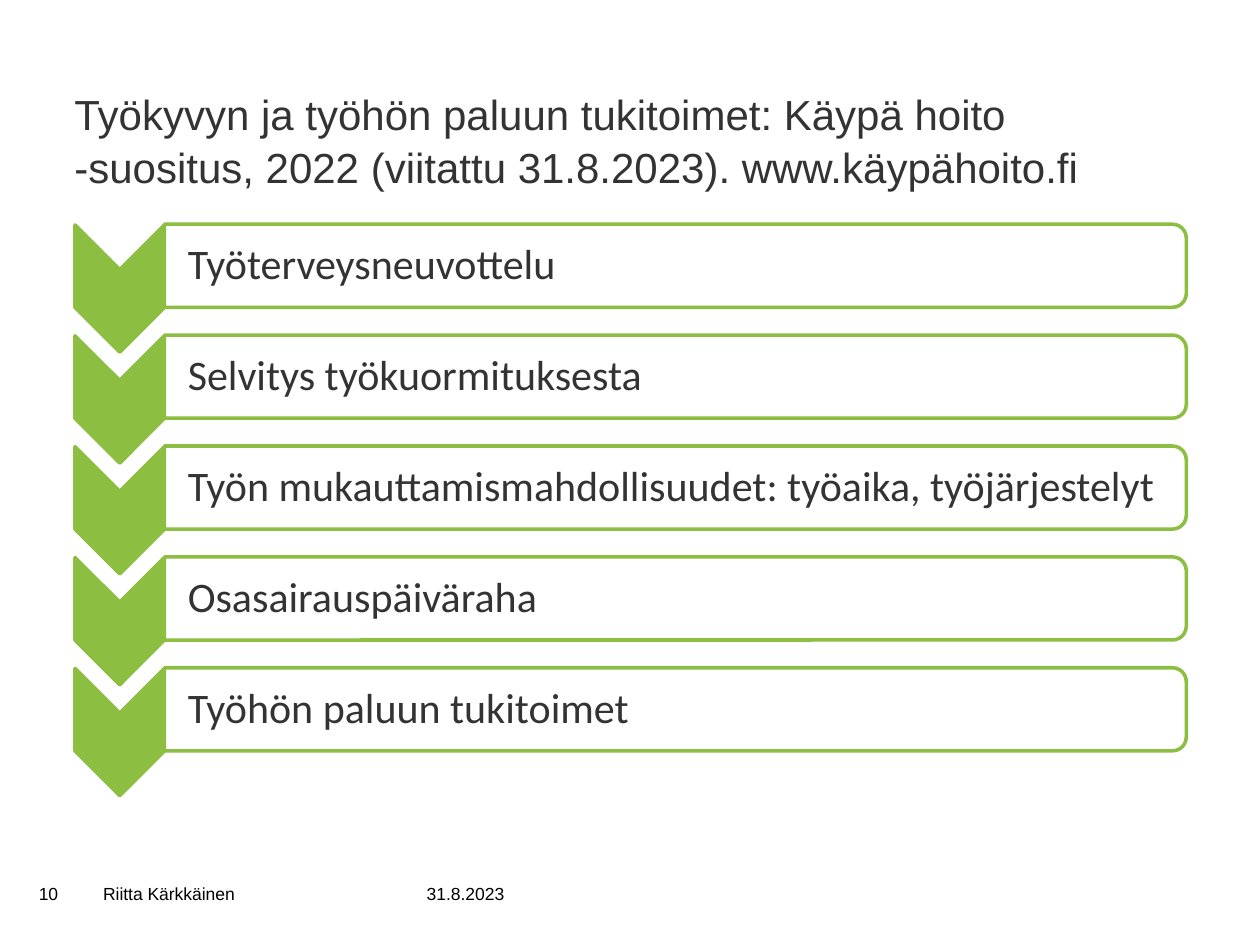
"""Build the slide on support measures for returning to work."""
from dataclasses import dataclass

from lxml import etree
from pptx import Presentation
from pptx.dml.color import RGBColor as Rgb
from pptx.enum.lang import MSO_LANGUAGE_ID as Lang
from pptx.enum.shapes import MSO_SHAPE as Kind
from pptx.enum.text import MSO_ANCHOR as Anchor, MSO_AUTO_SIZE as Fit, PP_ALIGN as Align
from pptx.oxml.ns import qn
from pptx.util import Inches, Pt


@dataclass(frozen=True)
class Theme:
    green: Rgb = Rgb(0x8C, 0xBE, 0x41)
    white: Rgb = Rgb(0xFF, 0xFF, 0xFF)
    dark: Rgb = Rgb(0x33, 0x33, 0x33)
    black: Rgb = Rgb(0, 0, 0)
    head: str = "Arial"
    body: str = "Calibri"
    large: int = 24
    small: int = 10


theme = Theme()


def write(box, text, font, size, color, pads, anchor=Anchor.MIDDLE, align=Align.LEFT):
    frame = box.text_frame
    frame.word_wrap, frame.auto_size = True, Fit.NONE
    frame.vertical_anchor = anchor
    (frame.margin_left, frame.margin_top,
     frame.margin_right, frame.margin_bottom) = [Inches(p) for p in pads]
    para = frame.paragraphs[0]
    para.alignment = align
    run = para.add_run()
    run.text = text
    run.font.name, run.font.size = font, Pt(size)
    run.font.color.rgb = color
    run.font.language_id = Lang.FINNISH
    return para


def turned(kind, mid_x, mid_y, wide, high, fill):
    shape = slide.shapes.add_shape(kind, Inches(mid_x - wide / 2), Inches(mid_y - high / 2),
                                   Inches(wide), Inches(high))
    shape.rotation = 90
    shape.shadow.inherit = False
    shape.fill.solid()
    shape.fill.fore_color.rgb = fill
    shape.line.color.rgb = theme.green
    shape.line.width = Pt(2)
    return shape


deck = Presentation()
deck.slide_width, deck.slide_height = Inches(10), Inches(7.5)
slide = deck.slides.add_slide(deck.slide_layouts[5])

title = slide.shapes.title
title.left, title.top = Inches(0.59), Inches(0.67)
title.width, title.height = Inches(8.82), Inches(0.98)
para = write(title, "Työkyvyn ja työhön paluun tukitoimet: Käypä hoito -suositus, 2022 "
             "(viitattu 31.8.2023). www.käypähoito.fi", theme.head, theme.large,
             theme.dark, (0, 0.02, 0, 0), Anchor.TOP)
para.line_spacing = 1.04

feet = [
    ("10", 0.21, 0.47, 0, Align.LEFT),
    ("Riitta Kärkkäinen", 0.72, 2.17, 0, Align.LEFT),
    ("31.8.2023", 2.92, 1.18, 0.1, Align.RIGHT),
]
for text, left, wide, pad, align in feet:
    box = slide.shapes.add_textbox(Inches(left), Inches(6.9), Inches(wide), Inches(0.39))
    write(box, text, theme.head, theme.small, theme.black,
          (0.1, 0.05, pad, 0.05), align=align)

steps = [
    "Työterveysneuvottelu",
    "Selvitys työkuormituksesta",
    "Työn mukauttamismahdollisuudet: työaika, työjärjestelyt",
    "Osasairauspäiväraha",
    "Työhön paluun tukitoimet",
]
for row, step in enumerate(steps):
    mid = 2.11 + row * 0.88
    turned(Kind.CHEVRON, 0.95, mid + 0.18, 1.01, 0.71, theme.green)
    bar = turned(Kind.ROUND_2_SAME_RECTANGLE, 5.36, mid, 0.66, 8.11, theme.white)
    tint = bar.fill._xPr.find(qn("a:solidFill"))[0]
    etree.SubElement(tint, qn("a:alpha"), val="90000")
    box = slide.shapes.add_textbox(Inches(1.3), Inches(mid - 0.295), Inches(8.08), Inches(0.59))
    para = write(box, step, theme.body, theme.large, theme.dark, (0.19, 0.02, 0.02, 0.02))
    para.line_spacing = 0.9

deck.save("out.pptx")
